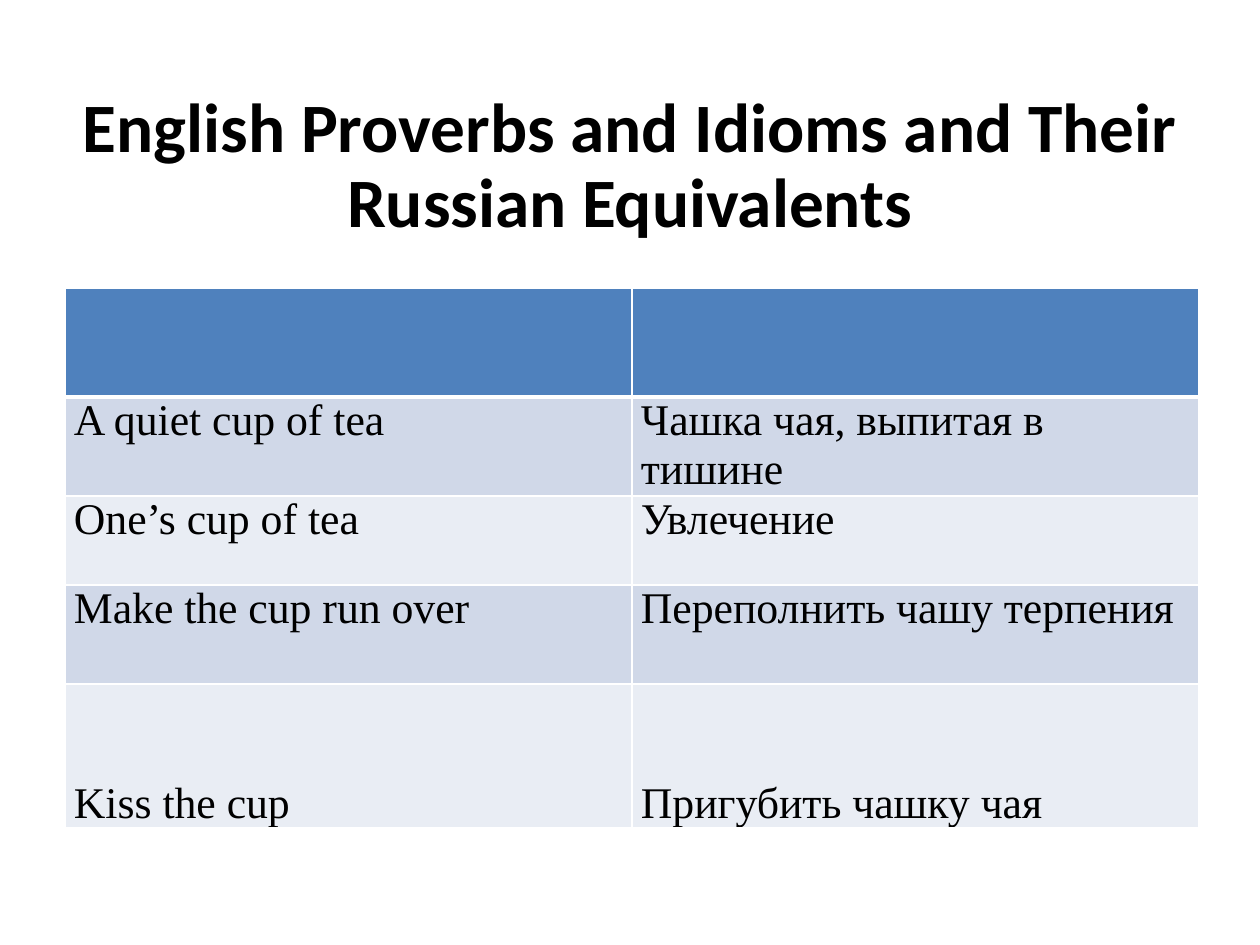
from dataclasses import dataclass

from lxml import etree
from pptx import Presentation
from pptx import util as u
from pptx.dml.color import RGBColor
from pptx.enum import text
from pptx.oxml import ns

PX_PER_INCH = 126
WHITE, BLACK = "FFFFFF", "000000"
HEADER, DARK_BAND, LIGHT_BAND = "4F81BD", "D0D8E8", "E9EDF4"


@dataclass(frozen=True)
class Row:
    height: int
    fill: str
    english: str = ""
    russian: str = ""
    anchor: text.MSO_ANCHOR = text.MSO_ANCHOR.TOP
    bottom_line: int = 1


ROWS = [
    Row(109, HEADER, bottom_line=3),
    Row(99, DARK_BAND, "A quiet cup of tea", "Чашка чая, выпитая в тишине"),
    Row(89, LIGHT_BAND, "One’s cup of tea", "Увлечение"),
    Row(99, DARK_BAND, "Make the cup run over", "Переполнить чашу терпения"),
    Row(144, LIGHT_BAND, "Kiss the cup", "Пригубить чашку чая", text.MSO_ANCHOR.BOTTOM),
]


def px(length: int) -> u.Emu:
    return u.Emu(round(length * 914400 / PX_PER_INCH))


def color(value: str) -> RGBColor:
    return RGBColor.from_string(value)


def write(frame, words: str, *, font: str, size: float, bold: bool = False,
          align=text.PP_ALIGN.LEFT, spacing: float = 1.0) -> None:
    para = frame.paragraphs[0]
    para.alignment = align
    para.line_spacing = spacing
    span = para.add_run()
    span.text = words
    span.font.name = font
    span.font.size = u.Pt(size)
    span.font.bold = bold
    span.font.color.rgb = color(BLACK)


def add_border(cell, side: str, points: int) -> None:
    properties = cell._tc.get_or_add_tcPr()
    line = etree.SubElement(properties, ns.qn(f"a:ln{side}"), w=str(u.Pt(points)))
    fill = etree.SubElement(line, ns.qn("a:solidFill"))
    etree.SubElement(fill, ns.qn("a:srgbClr"), val=WHITE)


def format_cell(cell, row: Row, words: str) -> None:
    for side in "LRT":
        add_border(cell, side, 1)
    add_border(cell, "B", row.bottom_line)
    cell.fill.solid()
    cell.fill.fore_color.rgb = color(row.fill)
    cell.margin_left = cell.margin_right = px(9)
    cell.margin_top = cell.margin_bottom = 0
    cell.vertical_anchor = row.anchor
    if words:
        write(cell.text_frame, words, font="Times New Roman", size=25)


def add_title(page, words: str) -> None:
    box = page.shapes.add_textbox(px(63), px(78), px(1134), px(179))
    frame = box.text_frame
    frame.word_wrap = True
    frame.vertical_anchor = text.MSO_ANCHOR.MIDDLE
    write(frame, words, font="Calibri", size=39.6, bold=True,
          align=text.PP_ALIGN.CENTER, spacing=0.9)


def add_proverbs(page, rows: list[Row]) -> None:
    height = sum(row.height for row in rows)
    table = page.shapes.add_table(
        len(rows), 2, px(65), px(288), px(1134), px(height)).table
    for column in table.columns:
        column.width = px(567)
    for index, row in enumerate(rows):
        table.rows[index].height = px(row.height)
        for column, words in enumerate((row.english, row.russian)):
            format_cell(table.cell(index, column), row, words)


def main() -> None:
    deck = Presentation()
    deck.slide_width, deck.slide_height = px(1260), px(945)
    page = deck.slides.add_slide(deck.slide_layouts[6])
    add_proverbs(page, ROWS)
    add_title(page, "English Proverbs and Idioms and Their Russian Equivalents")
    deck.save("out.pptx")


if __name__ == "__main__":
    main()
